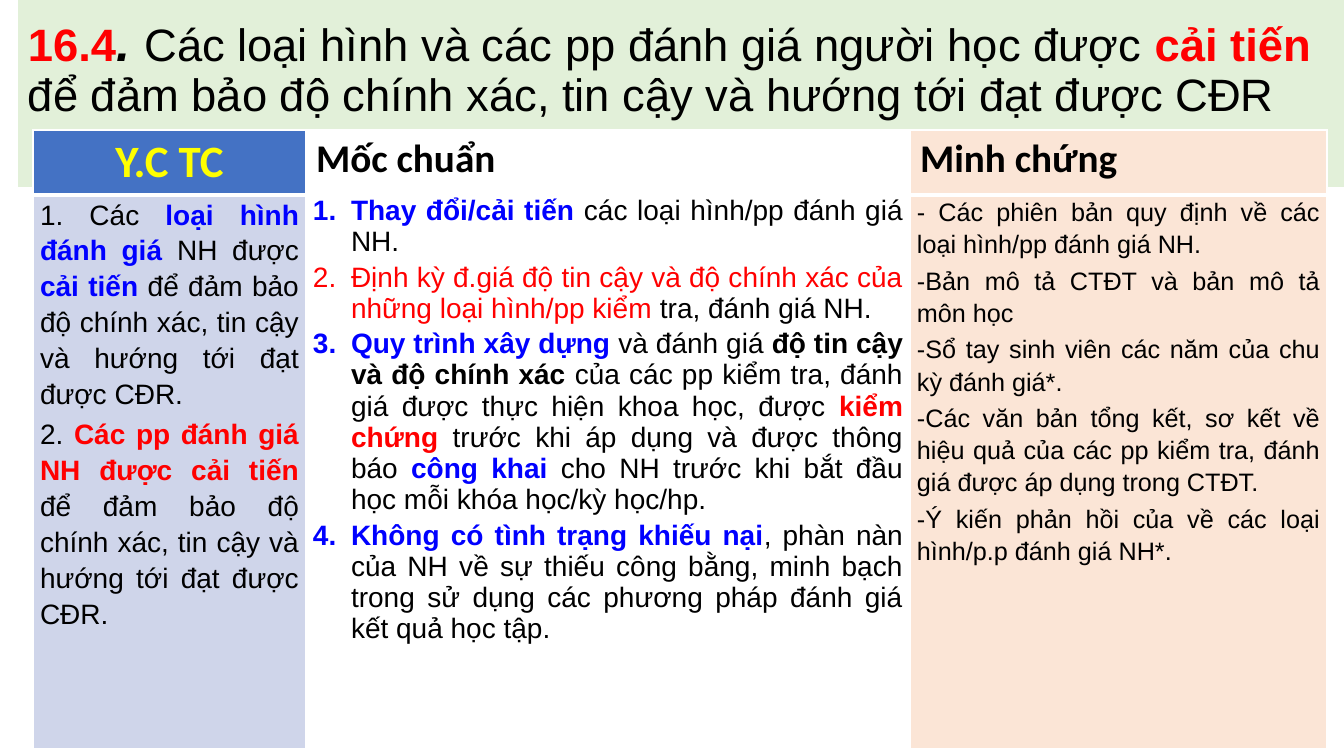
from lxml import etree
from pptx import Presentation
from pptx.dml.color import RGBColor
from pptx.enum.shapes import MSO_SHAPE
from pptx.enum.text import MSO_ANCHOR, PP_ALIGN
from pptx.oxml.ns import qn
from pptx.util import Emu, Pt

RECTANGLE = MSO_SHAPE.RECTANGLE
TOP = MSO_ANCHOR.TOP
LEFT, CENTER, JUSTIFY = PP_ALIGN.LEFT, PP_ALIGN.CENTER, PP_ALIGN.JUSTIFY

SLIDE_WIDTH, SLIDE_HEIGHT = 1344, 756
EMU_PER_PX = 12192000 / SLIDE_WIDTH

BLACK = RGBColor(0x00, 0x00, 0x00)
WHITE = RGBColor(0xFF, 0xFF, 0xFF)
RED = RGBColor(0xFF, 0x00, 0x00)
BLUE = RGBColor(0x00, 0x00, 0xFF)
YELLOW = RGBColor(0xFF, 0xFF, 0x00)
PALE_GREEN = RGBColor(0xE2, 0xF0, 0xD9)
HEADER_BLUE = RGBColor(0x44, 0x72, 0xC4)
PALE_BLUE = RGBColor(0xCF, 0xD5, 0xEA)
PALE_ORANGE = RGBColor(0xFB, 0xE5, 0xD6)

# Each run is (text, colour, bold)
TITLE = [
    ("16.4", RED, True),
    (". ", BLACK, True),
    ("Các loại hình và các pp đánh giá người học được ", BLACK, False),
    ("cải tiến ", RED, True),
    ("để đảm bảo độ chính xác, tin cậy và hướng tới đạt được CĐR", BLACK, False),
]

# Each header is (text, size, colour, alignment, fill)
HEADERS = [
    ("Y.C TC", 32, YELLOW, CENTER, HEADER_BLUE),
    ("Mốc chuẩn", 28, BLACK, LEFT, WHITE),
    ("Minh chứng", 28, BLACK, LEFT, PALE_ORANGE),
]

GOAL = "để đảm bảo độ chính xác, tin cậy và hướng tới đạt được CĐR."
REQUIREMENTS = [
    [("1. Các ", BLACK, False), ("loại hình đánh giá ", BLUE, True),
     ("NH được ", BLACK, False), ("cải tiến ", BLUE, True), (GOAL, BLACK, False)],
    [("2. ", BLACK, False), ("Các pp đánh giá NH được cải tiến ", RED, True),
     (GOAL, BLACK, False)],
]
BENCHMARKS = [
    [("Thay đổi/cải tiến ", BLUE, True),
     ("các loại hình/pp đánh giá NH.", BLACK, False)],
    [("Định kỳ đ.giá độ tin cậy và độ chính xác của những loại hình/pp kiểm ", RED, False),
     ("tra, đánh giá NH.", BLACK, False)],
    [("Quy trình xây dựng ", BLUE, True), ("và đánh giá ", BLACK, False),
     ("độ tin cậy và độ chính xác ", BLACK, True),
     ("của các pp kiểm tra, đánh giá được thực hiện khoa học, được ", BLACK, False),
     ("kiểm chứng", RED, True),
     (" trước khi áp dụng và được thông báo ", BLACK, False),
     ("công khai ", BLUE, True),
     ("cho NH trước khi bắt đầu học mỗi khóa học/kỳ học/hp.", BLACK, False)],
    [("Không có tình trạng khiếu nại", BLUE, True),
     (", phàn nàn của NH về sự thiếu công bằng, minh bạch trong sử dụng "
      "các phương pháp đánh giá kết quả học tập.", BLACK, False)],
]
EVIDENCE = [[(text, BLACK, False)] for text in (
    "- Các phiên bản quy định về các loại hình/pp đánh giá NH.",
    "-Bản mô tả CTĐT và bản mô tả môn học",
    "-Sổ tay sinh viên các năm của chu kỳ đánh giá*.",
    "-Các văn bản tổng kết, sơ kết về hiệu quả của các pp kiểm tra, đánh giá "
    "được áp dụng trong CTĐT.",
    "-Ý kiến phản hồi của về các loại hình/p.p đánh giá NH*.",
)]

# Each column is (paragraphs, size, line spacing, numbered, fill)
COLUMNS = [
    (REQUIREMENTS, 20, 1.15, False, PALE_BLUE),
    (BENCHMARKS, 20, 1.0, True, WHITE),
    (EVIDENCE, 18, Pt(23), False, PALE_ORANGE),
]
COLUMN_WIDTHS = (273, 604, 417)
HEADER_HEIGHT = 65


def px(length):
    return Emu(round(length * EMU_PER_PX))


def add_runs(paragraph, runs, size):
    paragraph.font.name = "Arial"
    paragraph.font.size = Pt(size)
    for text, color, bold in runs:
        run = paragraph.add_run()
        run.text = text
        run.font.color.rgb = color
        run.font.bold = bold


def number_paragraph(paragraph):
    properties = paragraph._p.get_or_add_pPr()
    properties.set("marL", str(px(38)))
    properties.set("indent", str(-px(38)))
    bullet = etree.SubElement(properties, qn("a:buAutoNum"), type="arabicPeriod")
    # Bullets come before the default run properties
    defaults = properties.find(qn("a:defRPr"))
    if defaults is not None:
        defaults.addprevious(bullet)


def set_borders(cell, widths):
    properties = cell._tc.get_or_add_tcPr()
    for position, (side, points) in enumerate(zip("LRTB", widths)):
        line = etree.Element(qn("a:ln" + side), w=str(Pt(points)))
        fill = etree.SubElement(line, qn("a:solidFill"))
        etree.SubElement(fill, qn("a:srgbClr"), val=str(WHITE))
        properties.insert(position, line)


def fill_cell(cell, color):
    cell.fill.solid()
    cell.fill.fore_color.rgb = color


def add_title(slide, left, top, width, height):
    band = slide.shapes.add_shape(RECTANGLE, px(left), px(top), px(width), px(height))
    band.shadow.inherit = False
    band.fill.solid()
    band.fill.fore_color.rgb = PALE_GREEN
    band.line.fill.background()
    frame = band.text_frame
    frame.word_wrap = True
    frame.vertical_anchor = TOP
    frame.margin_top = px(18)
    paragraph = frame.paragraphs[0]
    paragraph.alignment = LEFT
    paragraph.line_spacing = 0.9
    add_runs(paragraph, TITLE, 32.4)
    separator = paragraph.runs[1]
    separator.font.size = Pt(36)
    separator.font.italic = True


def add_header_cell(cell, text, size, color, alignment, fill):
    fill_cell(cell, fill)
    set_borders(cell, (1, 1, 1, 3))
    paragraph = cell.text_frame.paragraphs[0]
    paragraph.text = text
    paragraph.alignment = alignment
    font = paragraph.font
    font.name, font.size, font.bold = "Calibri", Pt(size), True
    font.color.rgb = color


def add_body_cell(cell, paragraphs, size, spacing, numbered, fill):
    fill_cell(cell, fill)
    set_borders(cell, (1, 1, 3, 1))
    cell.margin_left = cell.margin_right = px(7)
    cell.margin_top = cell.margin_bottom = 0
    frame = cell.text_frame
    for index, runs in enumerate(paragraphs):
        paragraph = frame.add_paragraph() if index else frame.paragraphs[0]
        paragraph.alignment = JUSTIFY
        paragraph.line_spacing = spacing
        paragraph.space_before = Pt(3)
        add_runs(paragraph, runs, size)
        if numbered:
            number_paragraph(paragraph)


def add_criteria_table(slide, left, top, width, height):
    table = slide.shapes.add_table(
        2, len(COLUMNS), px(left), px(top), px(width), px(height)).table
    table.first_row = table.horz_banding = False
    for column, column_width in zip(table.columns, COLUMN_WIDTHS):
        column.width = px(column_width)
    table.rows[0].height = px(HEADER_HEIGHT)
    table.rows[1].height = px(height - HEADER_HEIGHT)
    for index, (header, body) in enumerate(zip(HEADERS, COLUMNS)):
        add_header_cell(table.cell(0, index), *header)
        add_body_cell(table.cell(1, index), *body)


def main():
    presentation = Presentation()
    presentation.slide_width = px(SLIDE_WIDTH)
    presentation.slide_height = px(SLIDE_HEIGHT)
    slide = presentation.slides.add_slide(presentation.slide_layouts[6])
    add_title(slide, 18, 0, SLIDE_WIDTH - 18, 187)
    add_criteria_table(slide, 33, 130, sum(COLUMN_WIDTHS), 619)
    presentation.save("out.pptx")


if __name__ == "__main__":
    main()
